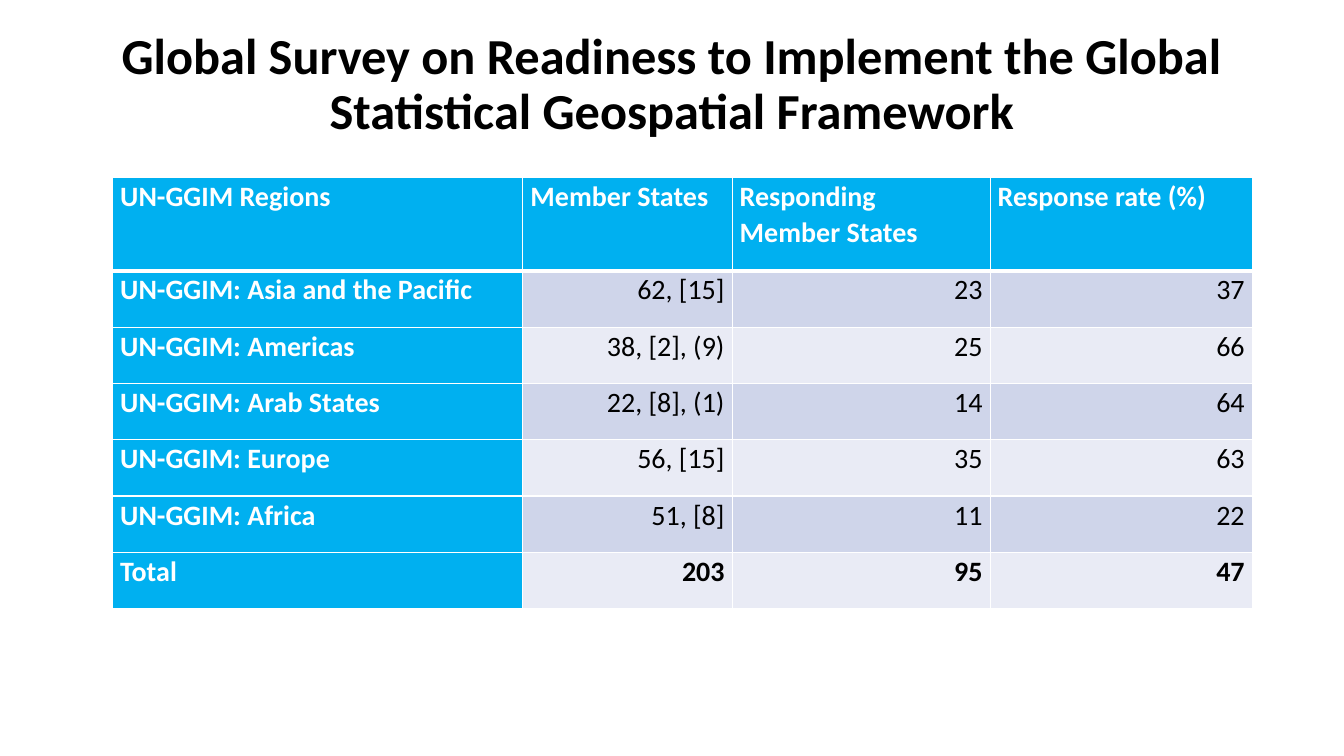
from lxml import etree
from pptx import Presentation
from pptx.dml.color import RGBColor
from pptx.enum import text
from pptx.oxml import ns
from pptx.util import Pt

# Content
TITLE = "Global Survey on Readiness to Implement the Global Statistical Geospatial Framework"
SURVEY = [
    ("UN-GGIM Regions", "Member States", "Responding Member States", "Response rate (%)"),
    ("UN-GGIM: Asia and the Pacific", "62, [15]", "23", "37"),
    ("UN-GGIM: Americas", "38, [2], (9)", "25", "66"),
    ("UN-GGIM: Arab States", "22, [8], (1)", "14", "64"),
    ("UN-GGIM: Europe", "56, [15]", "35", "63"),
    ("UN-GGIM: Africa", "51, [8]", "11", "22"),
    ("Total", "203", "95", "47"),
]
COLUMN_WIDTHS = (293, 149.5, 184.3, 187.2)
HEADER_HEIGHT, REGION_HEIGHT = 67, 40.2

# Style
FONT = "Calibri"
BLACK = RGBColor(0x00, 0x00, 0x00)
WHITE = RGBColor(0xFF, 0xFF, 0xFF)
BLUE = RGBColor(0x00, 0xB0, 0xF0)
BANDS = (RGBColor(0xE9, 0xEB, 0xF5), RGBColor(0xCF, 0xD5, 0xEA))


def style_paragraph(paragraph, size, color, bold, align, spacing):
    paragraph.alignment = align
    paragraph.line_spacing = spacing
    for run in paragraph.runs:
        run.font.name = FONT
        run.font.size = Pt(size)
        run.font.bold = bold
        run.font.color.rgb = color


def add_borders(cell, widths):
    """Put white lines on the cell, before its fill as the schema requires."""
    properties = cell._tc.get_or_add_tcPr()
    for place, (side, width) in enumerate(widths.items()):
        line = etree.Element(ns.qn(f"a:ln{side}"), w=str(Pt(width)))
        fill = etree.SubElement(line, ns.qn("a:solidFill"))
        etree.SubElement(fill, ns.qn("a:srgbClr"), val=str(WHITE))
        properties.insert(place, line)


prs = Presentation()
prs.slide_width, prs.slide_height = Pt(960), Pt(540)
slide = prs.slides.add_slide(prs.slide_layouts[6])

# Title, raised by a deep bottom margin
title = slide.shapes.add_textbox(Pt(66), Pt(28.8), Pt(828), Pt(104.4)).text_frame
title.word_wrap = True
title.vertical_anchor = text.MSO_ANCHOR.MIDDLE
title.margin_bottom = Pt(43)
title.text = TITLE
style_paragraph(title.paragraphs[0], 36, BLACK, True, text.PP_ALIGN.CENTER, 0.9)

# Table grid
row_heights = [HEADER_HEIGHT] + [REGION_HEIGHT] * (len(SURVEY) - 1)
table = slide.shapes.add_table(
    len(SURVEY), len(COLUMN_WIDTHS), Pt(80.5), Pt(126.5),
    Pt(sum(COLUMN_WIDTHS)), Pt(sum(row_heights))).table
for column, width in zip(table.columns, COLUMN_WIDTHS):
    column.width = Pt(width)
for row, height in zip(table.rows, row_heights):
    row.height = Pt(height)

# Table cells
for r, values in enumerate(SURVEY):
    for c, value in enumerate(values):
        cell = table.cell(r, c)
        is_label = r == 0 or c == 0
        is_total = r == len(SURVEY) - 1
        cell.text = value
        cell.margin_left = cell.margin_right = Pt(5.4)
        cell.margin_top = cell.margin_bottom = Pt(0)
        cell.fill.solid()
        cell.fill.fore_color.rgb = BLUE if is_label else BANDS[r % 2]
        style_paragraph(
            cell.text_frame.paragraphs[0], 20, WHITE if is_label else BLACK,
            is_label or is_total,
            text.PP_ALIGN.LEFT if is_label else text.PP_ALIGN.RIGHT, 1.07)
        add_borders(cell, {"L": 1, "R": 1, "T": 3 if r == 1 else 1, "B": 3 if r == 0 else 1})

prs.save("out.pptx")
